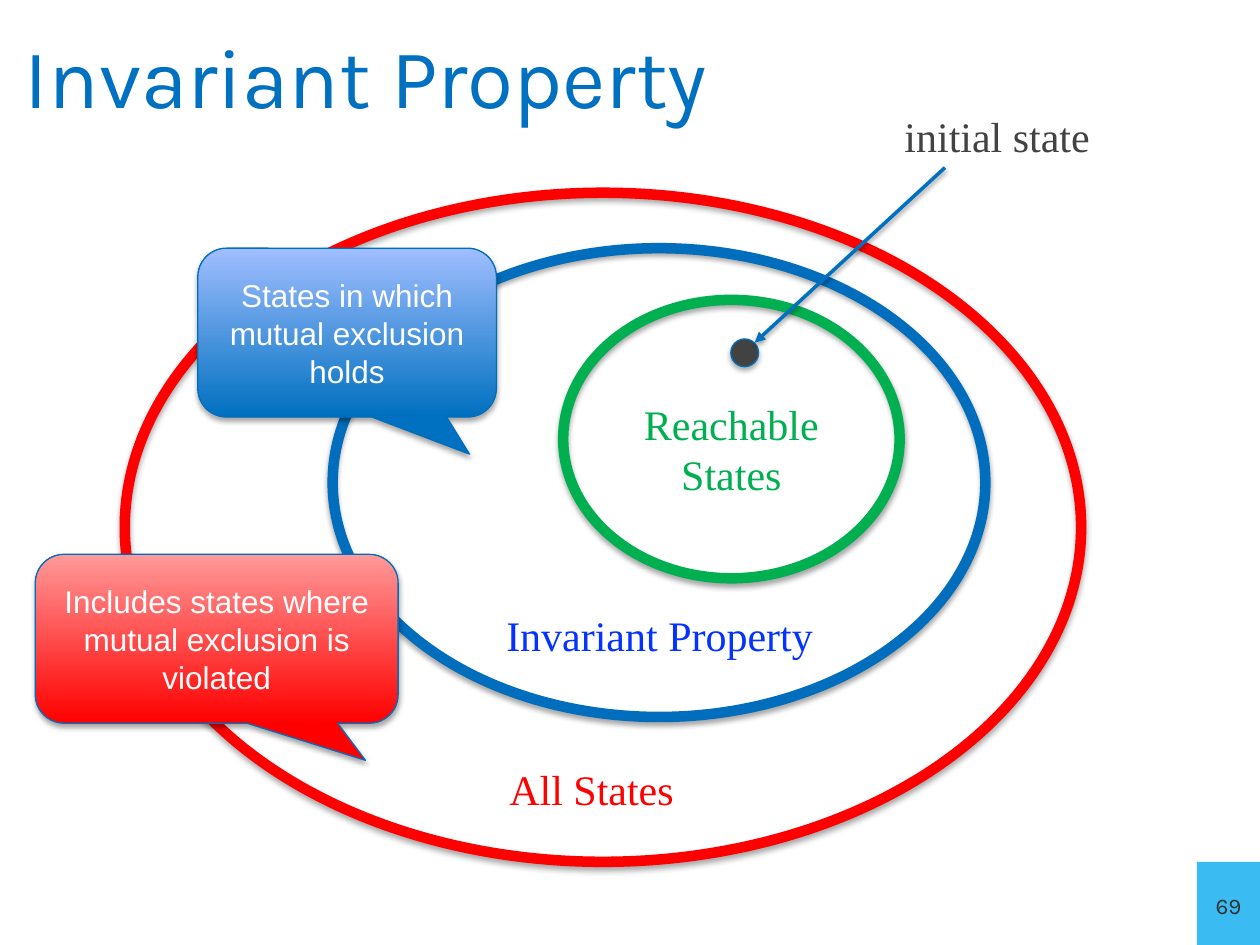
from dataclasses import dataclass

from lxml.etree import SubElement
from pptx import Presentation
from pptx.dml.color import RGBColor
from pptx.enum.shapes import MSO_CONNECTOR, MSO_SHAPE
from pptx.enum.text import MSO_ANCHOR, PP_ALIGN
from pptx.oxml.ns import qn
from pptx.util import Inches, Pt


@dataclass(frozen=True)
class Theme:
    heading_font: str = "Karla"
    label_font: str = "Times New Roman"
    callout_font: str = "Arial"
    heading_size: int = 48
    label_size: int = 24
    callout_size: int = 18
    number_size: int = 16
    blue: str = "0070C0"
    outline: str = "006EBC"
    light_blue: str = "A0BEFF"
    label_blue: str = "0432FF"
    red: str = "FF0000"
    light_red: str = "FF9999"
    green: str = "00B050"
    dark: str = "424242"
    number: str = "323232"
    corner: str = "3ABCF2"
    white: str = "FFFFFF"


class StateDiagram:
    """Draws on a grid of 100 columns by 75 rows."""

    def __init__(self, deck, theme):
        self.theme = theme
        self.slide = deck.slides.add_slide(deck.slide_layouts[6])
        self.column = deck.slide_width / 100
        self.row = deck.slide_height / 75

    def place(self, left, top, width, height):
        return (round(left * self.column), round(top * self.row),
                round(width * self.column), round(height * self.row))

    def shadow(self, item, distance=1.8, opacity=35):
        effects = item.element.spPr.find(qn("a:effectLst"))
        if effects is None:
            effects = SubElement(item.element.spPr, qn("a:effectLst"))
        cast = SubElement(effects, qn("a:outerShdw"), blurRad=str(Pt(3.1)),
                          dist=str(Pt(distance)), dir="5400000", rotWithShape="0")
        color = SubElement(cast, qn("a:srgbClr"), val="000000")
        SubElement(color, qn("a:alpha"), val=str(opacity * 1000))

    def shape(self, kind, area, fill=None, line=None, line_width=0.75):
        item = self.slide.shapes.add_shape(kind, *self.place(*area))
        if fill:
            item.fill.solid()
            item.fill.fore_color.rgb = RGBColor.from_string(fill)
        else:
            item.fill.background()
        if line:
            item.line.color.rgb = RGBColor.from_string(line)
            item.line.width = Pt(line_width)
        else:
            item.line.fill.background()
        item.shadow.inherit = False
        if line:
            self.shadow(item)
        return item

    def add_words(self, item, words, font, size, color, align=PP_ALIGN.CENTER,
                  anchor=MSO_ANCHOR.MIDDLE, wrap=True):
        frame = item.text_frame
        for name, value in {"word_wrap": wrap, "vertical_anchor": anchor}.items():
            setattr(frame, name, value)
        paragraph = frame.paragraphs[0]
        paragraph.alignment = align
        run = paragraph.add_run()
        run.text = words
        for name, value in {"name": font, "size": Pt(size)}.items():
            setattr(run.font, name, value)
        run.font.color.rgb = RGBColor.from_string(color)

    def text(self, area, words, font, size, color, **layout):
        box = self.slide.shapes.add_textbox(*self.place(*area))
        self.add_words(box, words, font, size, color, **layout)
        return box

    def label(self, area, words, color, **layout):
        self.text(area, words, self.theme.label_font, self.theme.label_size,
                  color, anchor=MSO_ANCHOR.TOP, **layout)

    def callout(self, area, words, base, light):
        item = self.shape(MSO_SHAPE.ROUNDED_RECTANGULAR_CALLOUT, area,
                          line=self.theme.outline)
        for index, value in enumerate((0.41, 0.72, 0.17)):
            item.adjustments[index] = value
        item.fill.gradient()
        item.fill.gradient_angle = 90
        for stop, position, color in zip(item.fill.gradient_stops, (0, 1), (base, light)):
            stop.position = position
            stop.color.rgb = RGBColor.from_string(color)
        self.add_words(item, words, self.theme.callout_font, self.theme.callout_size,
                       self.theme.white)

    def arrow(self, start, end):
        points = self.place(*start, *end)
        item = self.slide.shapes.add_connector(MSO_CONNECTOR.STRAIGHT, *points)
        item.line.color.rgb = RGBColor.from_string(self.theme.blue)
        item.line.width = Pt(2)
        SubElement(item.element.spPr.find(qn("a:ln")), qn("a:tailEnd"), type="triangle")
        self.shadow(item, distance=1.6, opacity=38)

    def page_number(self, area, number):
        self.shape(MSO_SHAPE.RECTANGLE, area, fill=self.theme.corner)
        box = self.text(area, number, self.theme.heading_font, self.theme.number_size,
                        self.theme.number, wrap=False)
        for properties in box.element.iter(qn("a:rPr")):
            properties.set("cap", "small")


def main():
    deck = Presentation()
    deck.slide_width, deck.slide_height = Inches(10), Inches(7.5)
    theme = Theme()
    diagram = StateDiagram(deck, theme)

    # Title and page number
    diagram.text((1, 1.1, 98, 9.7), "Invariant Property", theme.heading_font,
                 theme.heading_size, theme.blue, align=PP_ALIGN.LEFT)
    diagram.page_number((95, 68.4, 5, 6.6), "69")

    # Nested state sets, outermost first
    state_sets = [
        ((9.9, 15.3, 75.9, 53.1), theme.red),
        ((26.4, 19.7, 51.8, 37.2), theme.outline),
        ((44.7, 23.8, 26.7, 22.1), theme.green),
    ]
    for area, color in state_sets:
        diagram.shape(MSO_SHAPE.OVAL, area, line=color, line_width=6)

    # Names of the sets
    diagram.label((48.9, 31.1, 18.3, 13.1), "Reachable States", theme.green)
    diagram.label((28.5, 60.1, 36.9, 9.1), "All States", theme.red)
    diagram.label((33.9, 47.9, 36.9, 9.1), "Invariant Property", theme.label_blue)

    # Explanations
    diagram.callout((15.7, 19.7, 23.7, 13.4), "States in which mutual exclusion holds",
                    theme.blue, theme.light_blue)
    diagram.callout((2.8, 44, 28.8, 13.4),
                    "Includes states where mutual exclusion is violated",
                    theme.red, theme.light_red)

    # Initial state
    diagram.shape(MSO_SHAPE.OVAL, (58, 26.9, 2.2, 2.2), fill=theme.dark,
                  line=theme.outline)
    diagram.label((70.8, 8.3, 16.8, 5), "initial state", theme.dark,
                  align=PP_ALIGN.LEFT, wrap=False)
    diagram.arrow((75, 13.3), (59.9, 27.2))

    deck.save("out.pptx")


if __name__ == "__main__":
    main()
